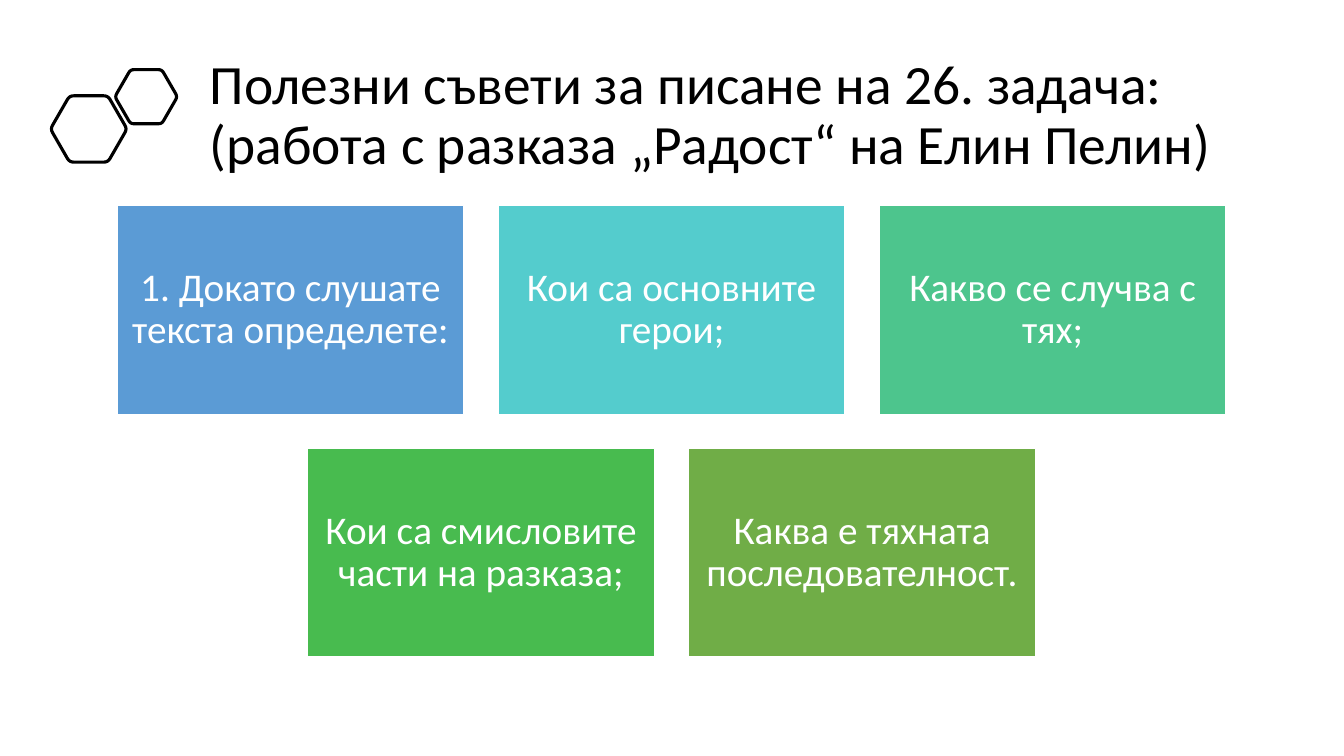
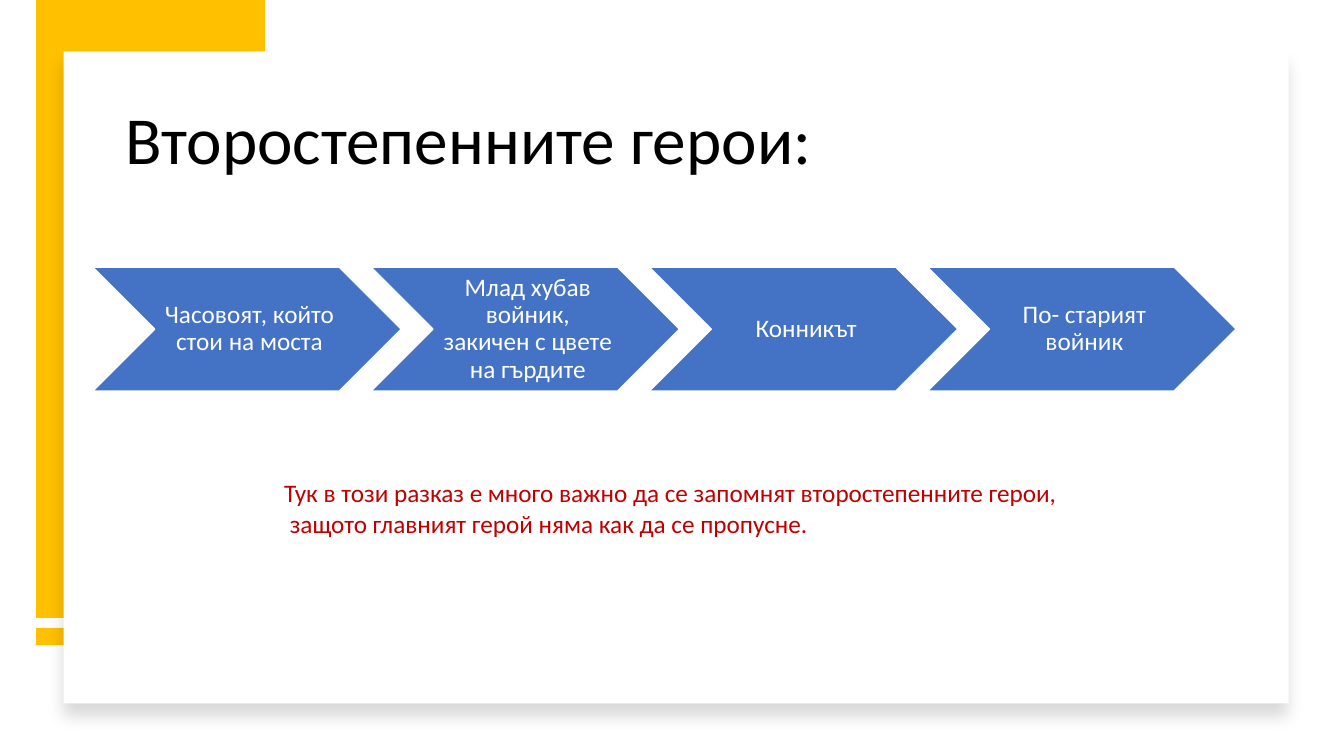
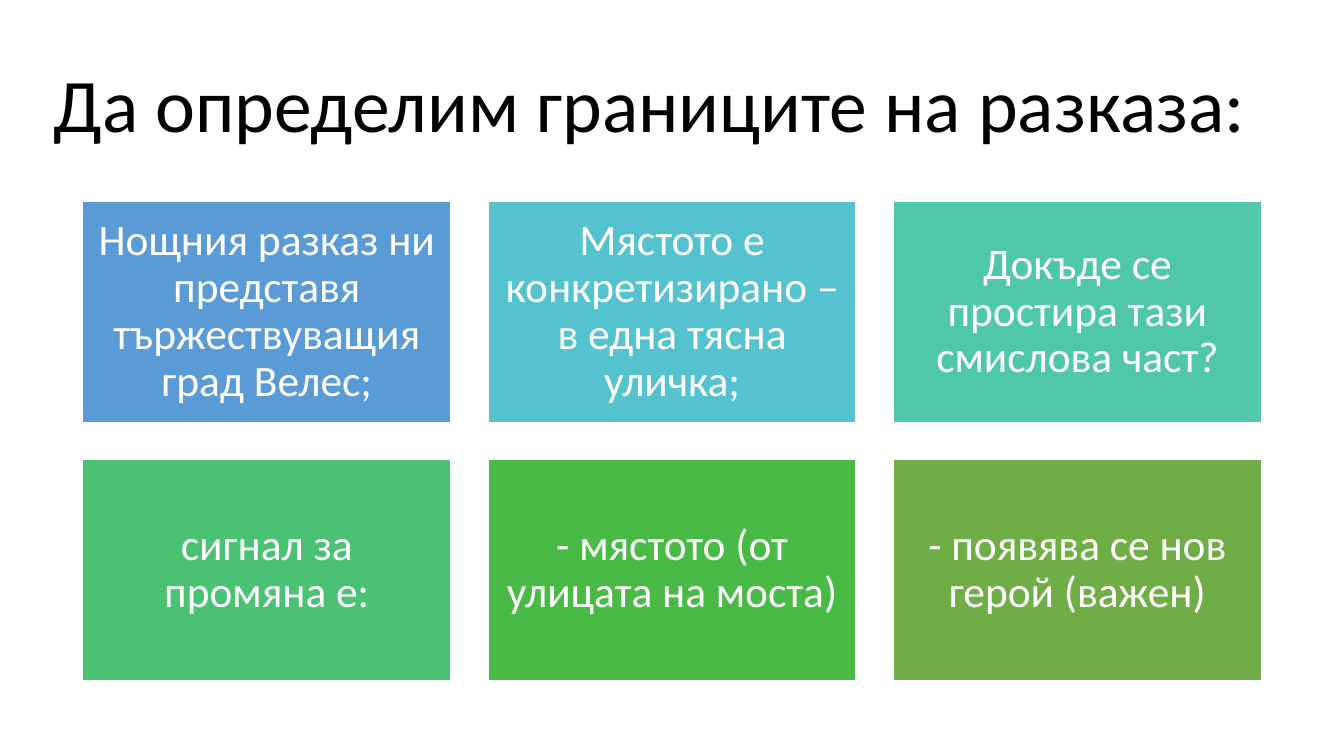
import math

import lxml.etree
import pptx
import pptx.dml.color
import pptx.enum.shapes
import pptx.enum.text
import pptx.oxml.ns
import pptx.util

RGB = pptx.dml.color.RGBColor
KIND = pptx.enum.shapes.MSO_SHAPE
ALIGN = pptx.enum.text.PP_ALIGN
MIDDLE = pptx.enum.text.MSO_ANCHOR.MIDDLE
FIT = pptx.enum.text.MSO_AUTO_SIZE

BLACK = RGB(0x00, 0x00, 0x00)
WHITE = RGB(0xFF, 0xFF, 0xFF)
GOLD = RGB(0xFF, 0xC0, 0x00)
BLUE = RGB(0x44, 0x72, 0xC4)
RED = RGB(0xC0, 0x00, 0x00)
SKY = RGB(0x5B, 0x9B, 0xD5)
AQUA = RGB(0x54, 0xCC, 0xCD)
MINT = RGB(0x4D, 0xC5, 0x8D)
LEAF = RGB(0x48, 0xBB, 0x4F)
MOSS = RGB(0x70, 0xAD, 0x47)
TEAL = RGB(0x55, 0xC3, 0xCF)
JADE = RGB(0x50, 0xC8, 0xA7)
FERN = RGB(0x4B, 0xC1, 0x74)
GRASS = RGB(0x4A, 0xBA, 0x46)

FONT = "Calibri"
SCALE = 9144
WIDE, HIGH = 1333, 750


def px(num):
    return pptx.util.Emu(round(num * SCALE))


def style(para, size, color, align=ALIGN.LEFT, space=None):
    para.font.name = FONT
    para.font.size = pptx.util.Pt(size)
    para.font.color.rgb = color
    para.alignment = align
    para.line_spacing = space


def add_slide(deck, text, box, size):
    """Add a slide with its title set in the given box."""
    slide = deck.slides.add_slide(deck.slide_layouts[5])
    title = slide.shapes.title
    title.left, title.top, title.width, title.height = map(px, box)
    frame = title.text_frame
    frame.text = text
    frame.auto_size = FIT.NONE
    frame.vertical_anchor = MIDDLE
    style(frame.paragraphs[0], size, BLACK, space=0.9)
    return slide


def add_block(slide, kind, box, fill, line=None):
    shape = slide.shapes.add_shape(kind, *map(px, box))
    shape.shadow.inherit = False
    shape.fill.solid()
    shape.fill.fore_color.rgb = fill
    if line is None:
        shape.line.fill.background()
    else:
        shape.line.color.rgb = line
        shape.line.width = pptx.util.Pt(1)
    return shape


def add_label(shape, text, size, pads):
    """Write centred white text in a shape; pads run left, top, right, bottom."""
    frame = shape.text_frame
    frame.word_wrap = True
    frame.vertical_anchor = MIDDLE
    (frame.margin_left, frame.margin_top,
     frame.margin_right, frame.margin_bottom) = map(px, pads)
    frame.text = text
    style(frame.paragraphs[0], size, WHITE, ALIGN.CENTER, 0.9)


def add_tiles(slide, rows, top, width, height, gap, size, pad):
    """Lay out rows of (text, fill) tiles, each row centred on the slide."""
    for row, tiles in enumerate(rows):
        span = len(tiles) * (width + gap) - gap
        left = (WIDE - span) // 2
        for col, (text, fill) in enumerate(tiles):
            box = (left + col * (width + gap), top + row * (height + gap),
                   width, height)
            tile = add_block(slide, KIND.RECTANGLE, box, fill, WHITE)
            add_label(tile, text, size, [pad] * 4)


def add_hex(slide, mid_x, mid_y, size, cut=0.11, steps=4):
    """Draw an outlined hexagon with rounded corners."""
    tips = [(mid_x + size * math.cos(math.radians(turn)),
             mid_y + size * math.sin(math.radians(turn)))
            for turn in range(0, 360, 60)]
    points = []
    for num, tip in enumerate(tips):
        ends = tips[num - 1], tips[(num + 1) % 6]
        for step in range(steps + 1):
            part = step / steps
            pull = cut * (1 - part) ** 2, cut * part ** 2
            points.append(tuple(
                px(tip[axis] + sum(force * (end[axis] - tip[axis])
                                   for force, end in zip(pull, ends)))
                for axis in (0, 1)))
    pen = slide.shapes.build_freeform(*points[0], scale=1.0)
    pen.add_line_segments(points[1:], close=True)
    shape = pen.convert_to_shape()
    shape.shadow.inherit = False
    shape.fill.background()
    shape.line.color.rgb = BLACK
    shape.line.width = pptx.util.Pt(2.25)


def add_shadow(shape, blur, dist, alpha):
    """Cast a soft black shadow straight down."""
    qn = pptx.oxml.ns.qn
    effects = shape.element.spPr.find(qn("a:effectLst"))
    outer = lxml.etree.SubElement(
        effects, qn("a:outerShdw"), blurRad=str(pptx.util.Pt(blur)),
        dist=str(pptx.util.Pt(dist)), dir="5400000", algn="t",
        rotWithShape="0")
    color = lxml.etree.SubElement(outer, qn("a:srgbClr"), val=str(BLACK))
    lxml.etree.SubElement(color, qn("a:alpha"), val=str(alpha * 1000))


def add_note(slide, box, lines, size, color):
    frame = slide.shapes.add_textbox(*map(px, box)).text_frame
    frame.word_wrap = False
    frame.auto_size = FIT.SHAPE_TO_FIT_TEXT
    frame.text = "\n".join(lines)
    for para in frame.paragraphs:
        style(para, size, color)


def add_tips(deck):
    slide = add_slide(
        deck, "Полезни съвети за писане на 26. задача:\v"
        "(работа с разказа „Радост“ на Елин Пелин)",
        (198, 57, 1081, 117), 39.6)
    add_hex(slide, 88, 128, 38)
    add_hex(slide, 145, 96, 31)
    rows = [
        [("1. Докато слушате текста определете:", SKY),
         ("Кои са основните герои;", AQUA),
         ("Какво се случва с тях;", MINT)],
        [("Кои са смисловите части на разказа;", LEAF),
         ("Каква е тяхната последователност.", MOSS)],
    ]
    add_tiles(slide, rows, 204, 344, 207, 34, 28, 12)


def add_heroes(deck):
    slide = add_slide(deck, "Второстепенните герои:",
                      (114, 89, 1113, 106), 48)
    add_block(slide, KIND.RECTANGLE, (36, 623, 227, 17), GOLD)
    add_block(slide, KIND.RECTANGLE, (36, 0, 227, 613), GOLD)
    panel = add_block(slide, KIND.RECTANGLE, (63, 51, 1215, 647), WHITE)
    add_shadow(panel, 11, 10, 15)
    # The title comes first in the slide, so lift it above the panel.
    slide.shapes.element.append(slide.shapes.title.element)
    heroes = ["Часовоят, който стои на моста",
              "Млад хубав войник, закичен с цвете на гърдите",
              "Конникът", "По- старият войник"]
    for num, hero in enumerate(heroes):
        arrow = add_block(slide, KIND.CHEVRON,
                          (92 + num * 276, 265, 306, 123), BLUE, WHITE)
        add_label(arrow, hero, 18, (8, 3, 3, 3))
    add_note(slide, (272, 469, 796, 71),
             ["Тук в този разказ е много важно да се запомнят "
              "второстепенните герои,",
              " защото главният герой няма как да се пропусне."], 18, RED)


def add_bounds(deck):
    slide = add_slide(deck, "Да определим границите на разказа:",
                      (43, 35, 1248, 145), 54)
    rows = [
        [("Нощния разказ ни представя тържествуващия град Велес;", SKY),
         ("Мястото е конкретизирано – в една тясна уличка;", TEAL),
         ("Докъде се простира тази смислова част?", JADE)],
        [("сигнал за промяна е:", FERN),
         ("- мястото (от улицата на моста)", GRASS),
         ("- появява се нов герой (важен)", MOSS)],
    ]
    add_tiles(slide, rows, 200, 365, 219, 37, 31, 13)


def main():
    deck = pptx.Presentation()
    deck.slide_width, deck.slide_height = px(WIDE), px(HIGH)
    add_tips(deck)
    add_heroes(deck)
    add_bounds(deck)
    deck.save("out.pptx")


if __name__ == "__main__":
    main()
